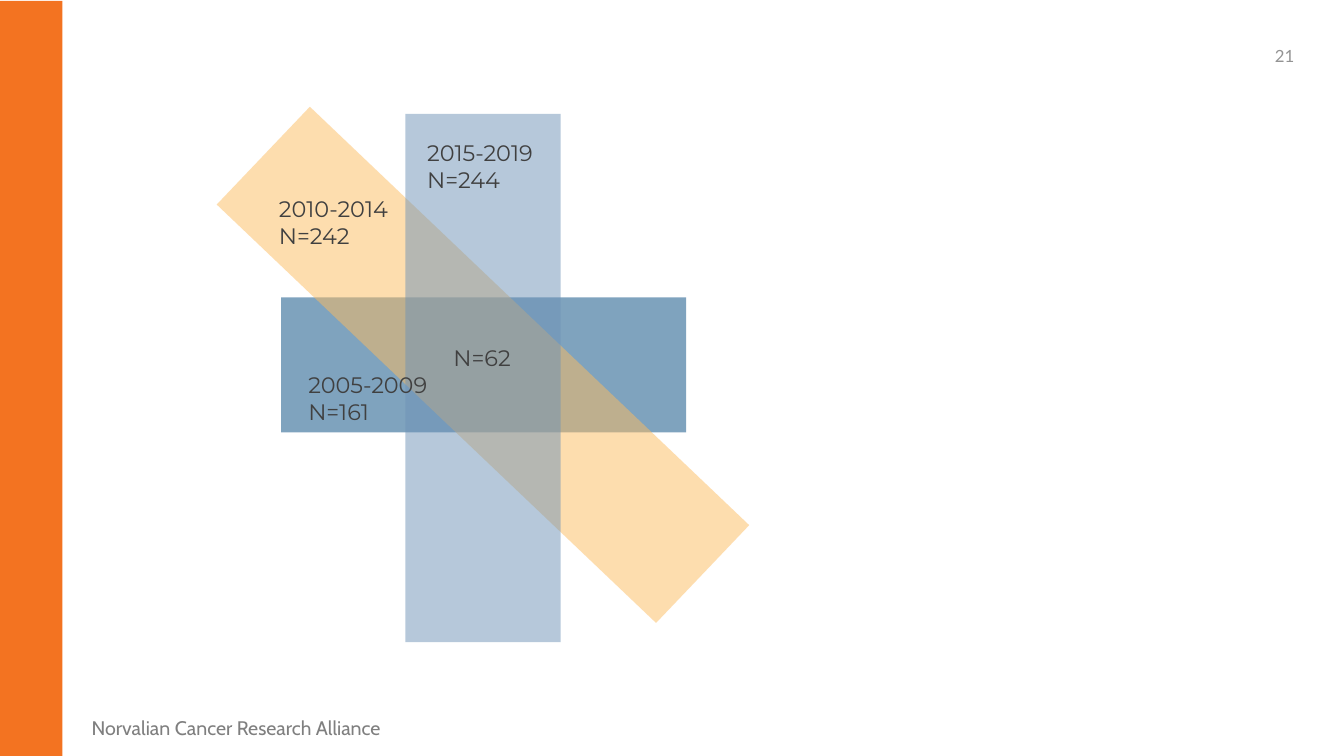
from dataclasses import dataclass

from lxml.etree import SubElement
from pptx import Presentation
from pptx.dml.color import RGBColor
from pptx.enum.shapes import MSO_SHAPE as Preset
from pptx.enum.text import MSO_ANCHOR as Anchor, MSO_AUTO_SIZE as AutoSize, PP_ALIGN as Align
from pptx.oxml.ns import qn
from pptx.util import Pt


@dataclass(frozen=True)
class Theme:
    stripe: str = "F37321"
    earliest: str = "00487F"
    middle: str = "FDBC5F"
    latest: str = "6E93B7"
    label: str = "404040"
    footer: str = "7F7F7F"
    number: str = "939393"
    label_size: int = 16
    footer_size: int = 14
    number_size: int = 12
    label_font: str = "Montserrat"
    footer_font: str = "Cabin"
    number_font: str = "Lato"


THEME = Theme()
BAR_OPACITY = 50

BARS = [
    (345.5, 260.6, 96.5, 289.4, 270, THEME.earliest),
    (345, 260.6, 96.5, 433.4, 313.6, THEME.middle),
    (345, 270, 110.9, 377.3, 0, THEME.latest),
]

LABELS = [
    ("2015-2019\nN=244", 298.1, 95.8, 99.4, 46),
    ("2010-2014\nN=242", 192.2, 136.1, 99.4, 46),
    ("2005-2009\nN=161", 213.1, 261.4, 107.3, 46),
    ("N=62", 316.8, 242.6, 56.2, 26.6),
]


def add_rectangle(shapes, left, top, width, height, color, opacity=100, rotation=0):
    shape = shapes.add_shape(Preset.RECTANGLE, Pt(left), Pt(top), Pt(width), Pt(height))
    shape.shadow.inherit = False
    shape.rotation = rotation
    shape.line.fill.background()
    shape.fill.solid()
    shape.fill.fore_color.rgb = RGBColor.from_string(color)
    if opacity < 100:
        fill_color = shape._element.spPr.find(qn("a:solidFill"))[0]
        SubElement(fill_color, qn("a:alpha"), val=str(opacity * 1000))


def add_bars(page):
    group = page.shapes.add_group_shape()
    for center_x, center_y, width, height, rotation, color in BARS:
        add_rectangle(group.shapes, center_x - width / 2, center_y - height / 2,
                      width, height, color, BAR_OPACITY, rotation)


def add_text(page, text, left, top, width, height, *, font=THEME.label_font,
             size=THEME.label_size, color=THEME.label, align=Align.LEFT,
             anchor=Anchor.TOP, wrap=True, grow=True):
    box = page.shapes.add_textbox(Pt(left), Pt(top), Pt(width), Pt(height))
    frame = box.text_frame
    frame.word_wrap = wrap
    frame.auto_size = AutoSize.SHAPE_TO_FIT_TEXT if grow else AutoSize.NONE
    frame.vertical_anchor = anchor
    frame.text = text
    for para in frame.paragraphs:
        para.alignment = align
        for span in para.runs:
            span.font.name = font
            span.font.size = Pt(size)
            span.font.color.rgb = RGBColor.from_string(color)


def main():
    deck = Presentation()
    deck.slide_width, deck.slide_height = Pt(960), Pt(540)
    page = deck.slides.add_slide(deck.slide_layouts.get_by_name("Blank"))

    add_rectangle(page.shapes, 0, 0.7, 44.6, 540, THEME.stripe)
    add_text(page, "Norvalian Cancer Research Alliance", 58.3, 507.6, 231.1, 24.5,
             font=THEME.footer_font, size=THEME.footer_size, color=THEME.footer, wrap=False)
    add_text(page, "21", 715.7, 25.2, 216, 28.8, font=THEME.number_font,
             size=THEME.number_size, color=THEME.number, align=Align.RIGHT,
             anchor=Anchor.MIDDLE, grow=False)

    add_bars(page)
    for text, left, top, width, height in LABELS:
        add_text(page, text, left, top, width, height)

    deck.save("out.pptx")


if __name__ == "__main__":
    main()
